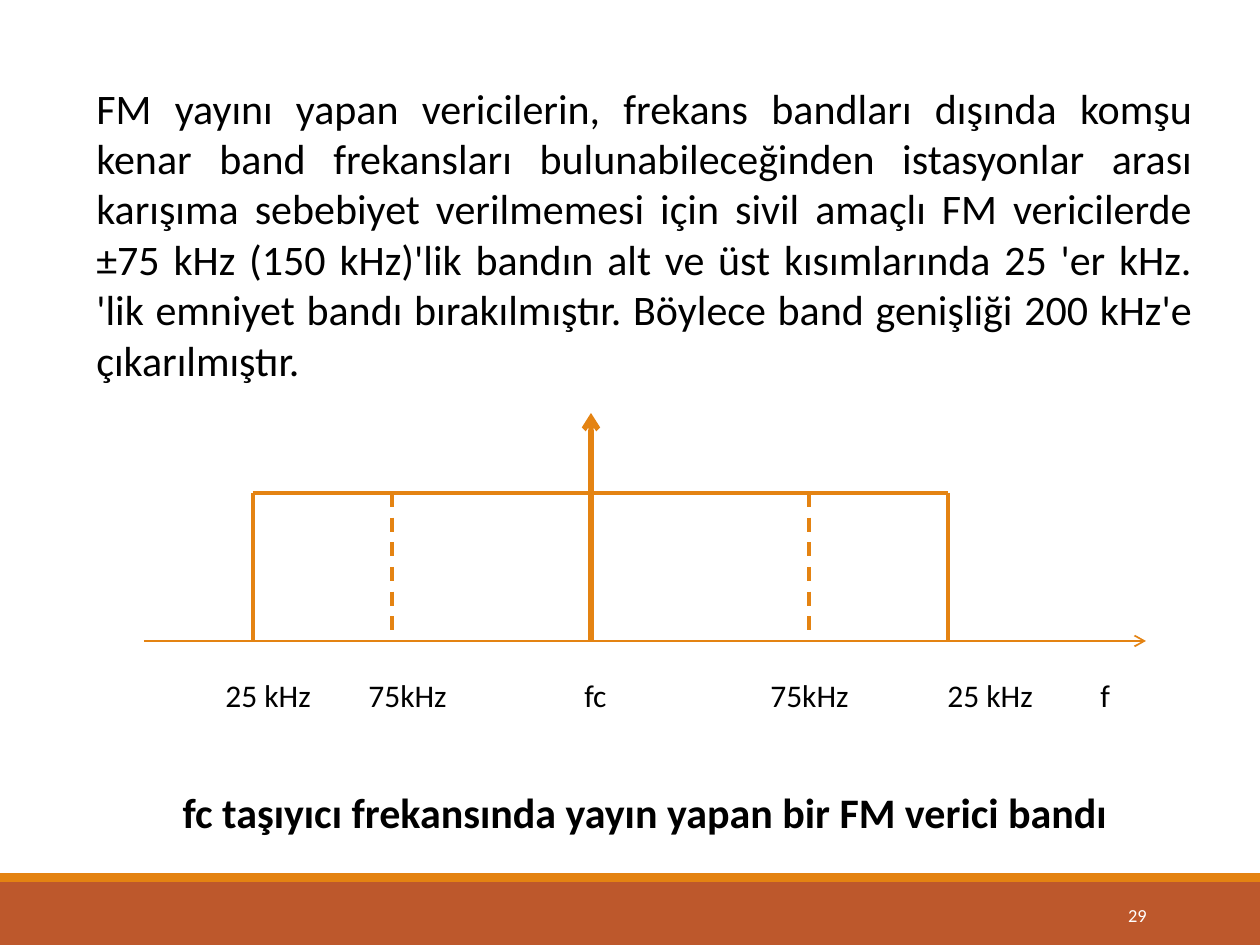
from itertools import pairwise

from lxml.etree import SubElement
from pptx import Presentation
from pptx.dml.color import RGBColor
from pptx.enum.dml import MSO_LINE
from pptx.enum.shapes import MSO_CONNECTOR, MSO_SHAPE
from pptx.enum.text import MSO_ANCHOR, PP_ALIGN
from pptx.oxml.ns import qn
from pptx.util import Pt

EMU_PER_PX = 914400 / 126
INSET = 13
COLORS = {"band": "BD582C", "accent": "E48312", "text": "000000", "number": "FFFFFF"}

EXPLANATION = (
    "FM yayını yapan vericilerin, frekans bandları dışında komşu kenar band "
    "frekansları bulunabileceğinden istasyonlar arası karışıma sebebiyet "
    "verilmemesi için sivil amaçlı FM vericilerde ±75 kHz (150 kHz)'lik bandın "
    "alt ve üst kısımlarında 25 'er kHz. 'lik emniyet bandı bırakılmıştır. "
    "Böylece band genişliği 200 kHz'e çıkarılmıştır."
)
CAPTION = "fc taşıyıcı frekansında yayın yapan bir FM verici bandı"
# Each axis label with its left edge, measured from the diagram's left side
AXIS_LABELS = [("25 kHz", 82), ("75kHz", 225), ("fc", 441),
               ("75kHz", 627), ("25 kHz", 804), ("f", 957)]


def px(length):
    return round(length * EMU_PER_PX)


def color(key):
    return RGBColor.from_string(COLORS[key])


def add_text(slide, box, text, size=18, bold=False, fill="text",
             align=PP_ALIGN.LEFT, anchor=MSO_ANCHOR.TOP, tabs=()):
    frame = slide.shapes.add_textbox(*map(px, box)).text_frame
    frame.word_wrap = True
    frame.vertical_anchor = anchor
    paragraph = frame.paragraphs[0]
    paragraph.alignment = align
    if tabs:
        tab_list = SubElement(paragraph._p.get_or_add_pPr(), qn("a:tabLst"))
        for position in tabs:
            SubElement(tab_list, qn("a:tab"), pos=str(px(position)), algn="l")
    run = paragraph.add_run()
    run.text = text
    run.font.name = "Calibri"
    run.font.size = Pt(size)
    run.font.bold = bold
    run.font.color.rgb = color(fill)


def add_line(slide, start, end, width=2, dashed=False, arrow=None):
    line = slide.shapes.add_connector(
        MSO_CONNECTOR.STRAIGHT, *map(px, (*start, *end)))
    line.line.color.rgb = color("accent")
    line.line.width = Pt(width)
    if dashed:
        line.line.dash_style = MSO_LINE.DASH
    if arrow:
        SubElement(line.line._get_or_add_ln(), qn("a:tailEnd"), type=arrow)
    SubElement(line._element.spPr, qn("a:effectLst"))


def add_footer(slide, box):
    left, top, width, height = box
    stripe = 9
    for key, y, depth in (("band", top + stripe, height - stripe),
                          ("accent", top, stripe)):
        bar = slide.shapes.add_shape(
            MSO_SHAPE.RECTANGLE, *map(px, (left, y, width, depth)))
        bar.shadow.inherit = False
        bar.fill.solid()
        bar.fill.fore_color.rgb = color(key)
        bar.line.fill.background()
    add_text(slide, (left + 1023, top + 17, 136, 50), "29", size=10.5,
             fill="number", align=PP_ALIGN.RIGHT, anchor=MSO_ANCHOR.MIDDLE)


def add_band_diagram(slide, box):
    """Draw the transmitter band over its frequency axis, with labels below."""
    left, top, width, height = box
    axis_y, band_y, carrier_x = top + 228, top + 80, left + 447
    edges = [left + offset for offset in (109, 248, 665, 804)]

    add_line(slide, (left, axis_y), (left + width, axis_y), width=1, arrow="arrow")
    add_line(slide, (carrier_x, axis_y), (carrier_x, top), width=3, arrow="arrow")
    for start, end in pairwise(edges):
        add_line(slide, (start, band_y), (end, band_y))
    for edge in edges:
        add_line(slide, (edge, band_y), (edge, axis_y), dashed=edge in edges[1:3])

    labels, offsets = zip(*AXIS_LABELS)
    add_text(slide, (left, axis_y + 29, width + 20, 50),
             "".join("\t" + label for label in labels),
             tabs=[offset - INSET for offset in offsets])
    add_text(slide, (left, top + height - 63, width, 63), CAPTION,
             size=24, bold=True, align=PP_ALIGN.CENTER)


def main():
    prs = Presentation()
    prs.slide_width, prs.slide_height = px(1260), px(945)
    slide = prs.slides.add_slide(prs.slide_layouts[6])
    add_footer(slide, (0, 873, 1260, 72))
    add_text(slide, (84, 76, 1121, 318), EXPLANATION, size=24,
             align=PP_ALIGN.JUSTIFY)
    add_band_diagram(slide, (144, 413, 1002, 430))
    prs.save("out.pptx")


if __name__ == "__main__":
    main()
